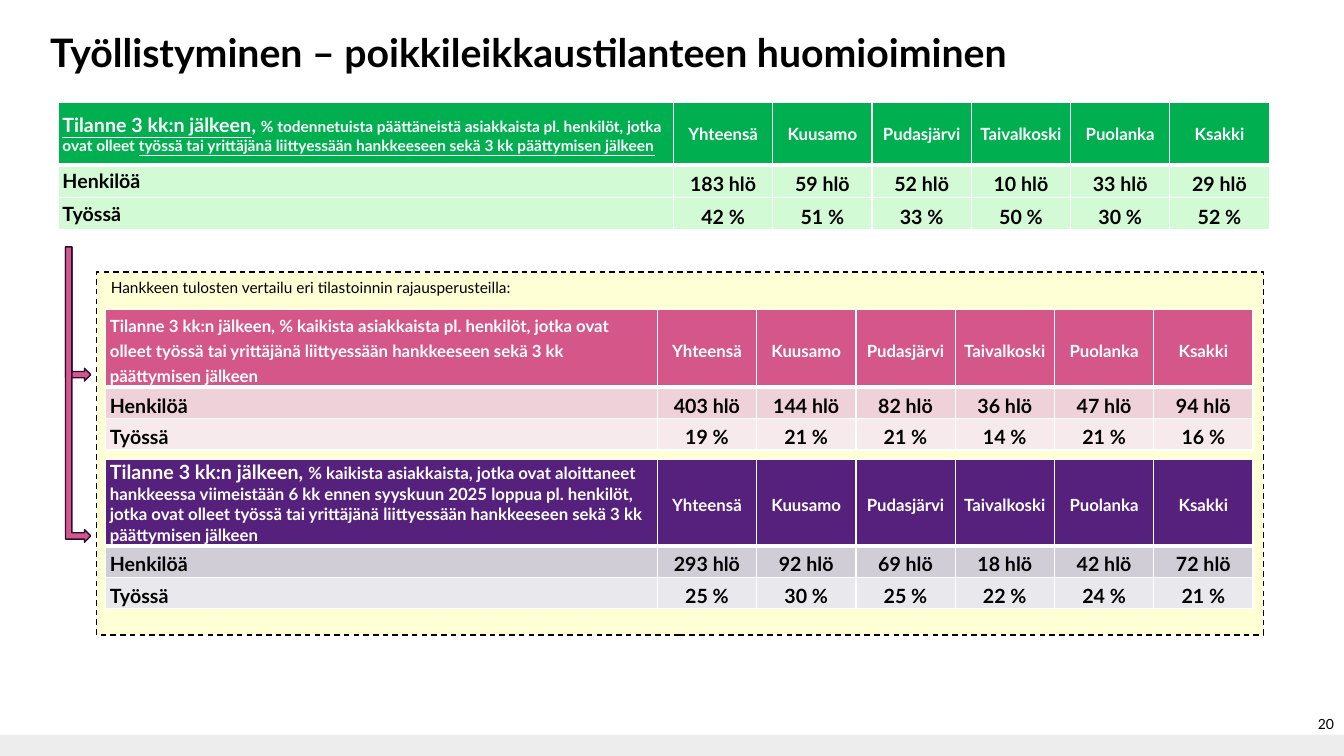
import pptx
import pptx.util
import pptx.dml.color
import pptx.enum.dml
import pptx.enum.shapes
import pptx.enum.text
import pptx.oxml.ns
import lxml.etree

Inches = pptx.util.Inches
Pt = pptx.util.Pt
RGBColor = pptx.dml.color.RGBColor
Shape = pptx.enum.shapes.MSO_SHAPE
Align = pptx.enum.text.PP_ALIGN
Anchor = pptx.enum.text.MSO_ANCHOR

BLACK = RGBColor(0x00, 0x00, 0x00)
WHITE = RGBColor(0xFF, 0xFF, 0xFF)
FOOTER_GRAY = RGBColor(0xED, 0xED, 0xED)
CREAM = RGBColor(0xFF, 0xFF, 0xD5)
PLUM = RGBColor(0x26, 0x0E, 0x37)
GREEN = RGBColor(0x00, 0xB0, 0x50)
GREEN_PALE = RGBColor(0xD2, 0xFA, 0xD4)
PINK = RGBColor(0xD5, 0x57, 0x89)
PINK_LIGHT = RGBColor(0xEF, 0xD1, 0xDA)
PINK_PALE = RGBColor(0xF7, 0xEA, 0xED)
PURPLE = RGBColor(0x56, 0x20, 0x7D)
PURPLE_LIGHT = RGBColor(0xD1, 0xCD, 0xD7)
PURPLE_PALE = RGBColor(0xE9, 0xE8, 0xEC)

FONT = "Lato"
AREAS = ["Yhteensä", "Kuusamo", "Pudasjärvi", "Taivalkoski", "Puolanka", "Ksakki"]
AREA_WIDTH = 0.985
HEADING = "Tilanne 3 kk:n jälkeen"

GREEN_HEADING = [
    (HEADING, 14, True),
    (", ", 14, False),
    ("% todennetuista päättäneistä asiakkaista pl. henkilöt, jotka ovat olleet ", 11, False),
    ("työssä tai yrittäjänä liittyessään hankkeeseen sekä 3 kk päättymisen jälkeen", 11, True),
]
PINK_HEADING = [
    (HEADING + ", % kaikista asiakkaista pl. henkilöt, jotka ovat olleet työssä tai "
     "yrittäjänä liittyessään hankkeeseen sekä 3 kk päättymisen ", 12, False),
    ("jälkeen", 12, True),
]
PURPLE_HEADING = [
    (HEADING + ", ", 14, False),
    ("% kaikista asiakkaista, jotka ovat aloittaneet hankkeessa viimeistään 6 kk ennen "
     "syyskuun 2025 loppua pl. henkilöt, jotka ovat olleet työssä tai yrittäjänä "
     "liittyessään hankkeeseen sekä 3 kk päättymisen jälkeen", 12, False),
]


def write_spans(para, spans, color, bold):
    for text, size, underline in spans:
        span = para.add_run()
        span.text = text
        span.font.name = FONT
        span.font.size = Pt(size)
        span.font.bold = bold
        span.font.underline = underline
        span.font.color.rgb = color


def add_label(page, box, text, size, bold=False, align=Align.LEFT, anchor=Anchor.TOP):
    frame = page.shapes.add_textbox(*map(Inches, box)).text_frame
    frame.word_wrap = True
    frame.vertical_anchor = anchor
    para = frame.paragraphs[0]
    para.alignment = align
    write_spans(para, [(text, size, False)], BLACK, bold)


def add_block(page, kind, box, fill, line=None):
    block = page.shapes.add_shape(kind, *map(Inches, box))
    block.shadow.inherit = False
    block.fill.solid()
    block.fill.fore_color.rgb = fill
    if line is None:
        block.line.fill.background()
    else:
        block.line.color.rgb = line
        block.line.width = Pt(1)
    return block


def add_branch_arrow(page, box):
    left, top, width, height = box
    unrotated = (left + (width - height) / 2, top + (height - width) / 2, height, width)
    add_block(page, Shape.BENT_UP_ARROW, unrotated, PINK, PLUM).rotation = 90


def set_borders(cell, top, bottom):
    properties = cell._tc.get_or_add_tcPr()
    for tag, points in (("a:lnL", 1), ("a:lnR", 1), ("a:lnT", top), ("a:lnB", bottom)):
        edge = lxml.etree.SubElement(properties, pptx.oxml.ns.qn(tag), w=str(Pt(points)))
        solid = lxml.etree.SubElement(edge, pptx.oxml.ns.qn("a:solidFill"))
        lxml.etree.SubElement(solid, pptx.oxml.ns.qn("a:srgbClr"), val=str(WHITE))


def fill_cell(cell, spans, row, column, fill, anchor, spaced):
    set_borders(cell, 3 if row == 1 else 1, 3 if row == 0 else 1)
    cell.fill.solid()
    cell.fill.fore_color.rgb = fill
    side = 0.02 if row == 0 and column > 0 else 0.04
    cell.margin_left = cell.margin_right = Inches(side)
    cell.margin_top = cell.margin_bottom = Inches(0.01)
    cell.vertical_anchor = anchor
    para = cell.text_frame.paragraphs[0]
    para.alignment = Align.CENTER if column else Align.LEFT
    if spaced:
        para.line_spacing = 1.25
        if row or column:
            para.space_after = Pt(10)
    write_spans(para, spans, BLACK if row else WHITE, True)


def add_result_table(page, box, heights, heading, people, shares, fills,
                     label_anchor, heading_spaced, label_spaced, area_spaced):
    grid = page.shapes.add_table(3, len(AREAS) + 1, *map(Inches, box)).table
    grid.first_row = grid.horz_banding = False
    for row, height in zip(grid.rows, heights):
        row.height = Inches(height)
    for column in grid.columns:
        column.width = Inches(AREA_WIDTH)
    grid.columns[0].width = Inches(box[2] - AREA_WIDTH * len(AREAS))

    rows = [
        [heading] + [[(area, 12, False)] for area in AREAS],
        [[("Henkilöä", 14, False)]] + [[(f"{count} hlö", 14, False)] for count in people],
        [[("Työssä", 14, False)]] + [[(f"{share} %", 14, False)] for share in shares],
    ]
    for row, (entries, fill) in enumerate(zip(rows, fills)):
        for column, spans in enumerate(entries):
            if column == 0:
                spaced = label_spaced if row else heading_spaced
            else:
                spaced = area_spaced if row == 0 else True
            anchor = Anchor.MIDDLE if column else label_anchor
            fill_cell(grid.cell(row, column), spans, row, column, fill, anchor, spaced)


def add_comparison(page, box):
    left, top, width, height = box
    panel = add_block(page, Shape.RECTANGLE, box, CREAM, BLACK)
    panel.line.dash_style = pptx.enum.dml.MSO_LINE.DASH
    add_label(page, (left + 0.04, top + 0.01, 6.78, 0.29),
              "Hankkeen tulosten vertailu eri tilastoinnin rajausperusteilla:", 11)
    table_left, table_width = left + 0.09, width - 0.19
    add_result_table(page, (table_left, top + 0.37, table_width, 1.39), (0.77, 0.31, 0.31),
                     PINK_HEADING, (403, 144, 82, 36, 47, 94), (19, 21, 21, 14, 21, 16),
                     (PINK, PINK_LIGHT, PINK_PALE), Anchor.TOP, True, True, True)
    add_result_table(page, (table_left, top + 1.86, table_width, 1.47), (0.85, 0.31, 0.31),
                     PURPLE_HEADING, (293, 92, 69, 18, 42, 72), (25, 30, 25, 22, 24, 21),
                     (PURPLE, PURPLE_LIGHT, PURPLE_PALE), Anchor.TOP, False, True, True)
    for arrow_height in (1.33, 2.93):
        add_branch_arrow(page, (left - 0.31, top - 0.25, 0.25, arrow_height))


def build_page(deck):
    page = deck.slides.add_slide(deck.slide_layouts[6])
    add_block(page, Shape.RECTANGLE, (0, 7.29, 13.33, 0.21), FOOTER_GRAY)
    add_label(page, (0.4, 0.11, 12.13, 0.8),
              "Työllistyminen – poikkileikkaustilanteen huomioiminen", 28, True,
              anchor=Anchor.MIDDLE)
    add_label(page, (12.73, 6.98, 0.6, 0.4), "20", 10, align=Align.RIGHT,
              anchor=Anchor.MIDDLE)
    add_result_table(page, (0.58, 1.02, 12.01, 1.26), (0.62, 0.32, 0.32),
                     GREEN_HEADING, (183, 59, 52, 10, 33, 29), (42, 51, 33, 50, 30, 52),
                     (GREEN, GREEN_PALE, GREEN_PALE), Anchor.MIDDLE, False, False, False)
    add_comparison(page, (0.96, 2.7, 11.57, 3.6))


def main():
    deck = pptx.Presentation()
    deck.slide_width = Inches(13.33)
    deck.slide_height = Inches(7.5)
    build_page(deck)
    deck.save("out.pptx")


if __name__ == "__main__":
    main()
